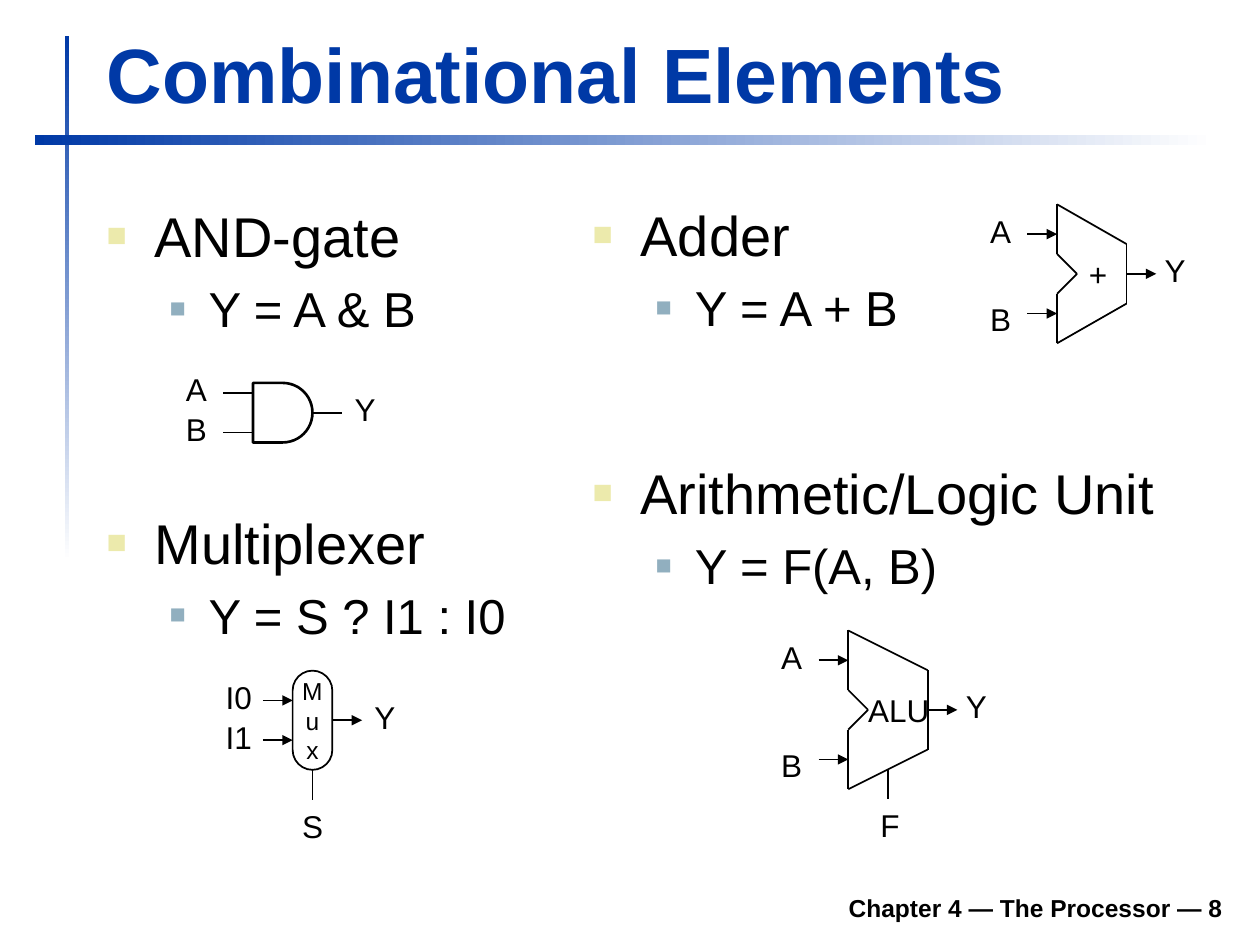
from dataclasses import dataclass
from lxml.etree import SubElement as Sub
from pptx import Presentation
from pptx.dml.color import RGBColor as Rgb
from pptx.enum.shapes import MSO_CONNECTOR as Conn, MSO_SHAPE as Kind
from pptx.enum.text import MSO_ANCHOR as Anchor, MSO_AUTO_SIZE as Auto, PP_ALIGN as Align
from pptx.oxml.ns import qn
from pptx.util import Inches, Mm, Pt


@dataclass(frozen=True)
class Theme:
    """Colours, type sizes and line widths."""
    font: str = "Arial"
    blue: str = "0039A6"
    ink: str = "000000"
    white: str = "FFFFFF"
    sand: str = "ECEAAC"
    steel: str = "91AFBF"
    title: int = 44
    head: int = 32
    sub: int = 28
    label: int = 18
    small: int = 14
    thin: float = 1
    bold: float = 1.5


T = Theme()


def cells(*nums):
    """Turn counts of grid cells, 127 to the slide's width, into lengths."""
    return [Mm(2 * n) for n in nums]


def style(par, size, color=T.ink, bold=False):
    """Format every run of a paragraph."""
    for run in par.runs:
        font = run.font
        font.name, font.size, font.bold = T.font, Pt(size), bold
        font.color.rgb = Rgb.from_string(color)


def inset(frame, gap=0):
    """Give a text frame equal insets."""
    frame.margin_left = frame.margin_right = gap
    frame.margin_top = frame.margin_bottom = gap


def title(slide, text, box):
    """Move and format the title placeholder."""
    shape = slide.shapes.title
    shape.left, shape.top, shape.width, shape.height = cells(*box)
    frame = shape.text_frame
    frame.text = text
    frame.vertical_anchor, frame.auto_size = Anchor.BOTTOM, Auto.NONE
    frame.paragraphs[0].alignment = Align.LEFT
    style(frame.paragraphs[0], T.title, T.blue, True)


def footer(slide, text, box):
    """Add the right-aligned footer."""
    frame = slide.shapes.add_textbox(*cells(*box)).text_frame
    frame.text = text
    frame.word_wrap, frame.vertical_anchor = True, Anchor.BOTTOM
    frame.paragraphs[0].alignment = Align.RIGHT
    style(frame.paragraphs[0], T.small, bold=True)


def bar(slide, box, angle):
    """Add a bar that fades from blue to white."""
    shape = slide.shapes.add_shape(Kind.RECTANGLE, *cells(*box))
    shape.shadow.inherit = False
    shape.line.fill.background()
    shape.fill.gradient()
    shape.fill.gradient_angle = angle
    for stop, color in zip(shape.fill.gradient_stops, (T.blue, T.white)):
        stop.color.rgb = Rgb.from_string(color)


def bullet(par, size, color, share, left, hang):
    """Format a paragraph with a square bullet."""
    style(par, size)
    par.space_before = Pt(size * 0.2)
    props = par._p.get_or_add_pPr()
    props.set("marL", str(Inches(left)))
    props.set("indent", str(-Inches(hang)))
    Sub(Sub(props, qn("a:buClr")), qn("a:srgbClr"), val=color)
    Sub(props, qn("a:buSzPct"), val=str(share * 1000))
    Sub(props, qn("a:buFont"), typeface=T.font)
    Sub(props, qn("a:buChar"), char="■")


def topic(slide, head, rule, x, y, wide):
    """Add an element's name with its equation below."""
    frame = slide.shapes.add_textbox(*cells(x, y, wide, 18)).text_frame
    frame.word_wrap = True
    frame.text = f"{head}\n{rule}"
    top, low = frame.paragraphs
    low.level = 1
    bullet(top, T.head, T.sand, 60, 0.38, 0.38)
    bullet(low, T.sub, T.steel, 55, 0.81, 0.31)


def label(slide, text, x, y):
    """Add a signal name."""
    wide = 4.7 + 0.5 * (len(text) - 1)
    frame = slide.shapes.add_textbox(*cells(x, y, wide, 5.1)).text_frame
    frame.text, frame.word_wrap = text, False
    style(frame.paragraphs[0], T.label)


def lead(slide, start, end, arrow=False):
    """Add a wire, with an arrowhead if asked."""
    wire = slide.shapes.add_connector(Conn.STRAIGHT, *cells(*start, *end))
    wire.line.width = Pt(T.thin)
    wire.line.color.rgb = Rgb.from_string(T.ink)
    if arrow:
        Sub(wire.line._get_or_add_ln(), qn("a:tailEnd"), type="triangle")
    Sub(wire._element.spPr, qn("a:effectLst"))


def pin(slide, text, x, y, arrow=True, drop=2.9):
    """Add an input wire that ends at x, and its name."""
    lead(slide, (x - 3, y), (x, y), arrow)
    label(slide, text, x - 8, y - drop)


def exit(slide, x, y, arrow=True, gap=3):
    """Add the output wire that starts at x, and its name."""
    lead(slide, (x, y), (x + 3, y), arrow)
    label(slide, "Y", x + gap, y - 2.9)


def trace(shape, width=T.thin):
    """Leave a shape with an outline only."""
    shape.shadow.inherit = False
    shape.fill.background()
    shape.line.width = Pt(width)
    shape.line.color.rgb = Rgb.from_string(T.ink)


def gate(slide, x, y):
    """Draw the AND-gate."""
    trace(slide.shapes.add_shape(Kind.FLOWCHART_DELAY, *cells(x, y, 6, 6)), T.bold)
    pin(slide, "A", x, y + 1, False)
    pin(slide, "B", x, y + 5, False)
    exit(slide, x + 6, y + 3, False)


def mux(slide, x, y):
    """Draw the multiplexer."""
    body = slide.shapes.add_shape(Kind.ROUNDED_RECTANGLE, *cells(x, y, 4, 10))
    body.adjustments[0] = 0.5
    trace(body)
    frame = body.text_frame
    inset(frame)
    frame.text, frame.vertical_anchor = "M\vu\vx", Anchor.MIDDLE
    frame.paragraphs[0].alignment = Align.CENTER
    style(frame.paragraphs[0], T.small)
    pin(slide, "I0", x, y + 3)
    pin(slide, "I1", x, y + 7)
    exit(slide, x + 4, y + 5)
    lead(slide, (x + 2, y + 13), (x + 2, y + 10))
    label(slide, "S", x - 0.3, y + 13.1)


def unit(slide, text, x, y, wide, high, shift):
    """Draw a notched arithmetic block with its text shifted from the left."""
    mid = high / 2
    spots = [(0, 0), (wide, 4), (wide, high - 4), (0, high),
             (0, mid + 2), (2, mid), (0, mid - 2)]
    ends = [(x + dx, y + dy) for dx, dy in spots]
    for start, end in zip(ends, ends[1:] + ends[:1]):
        lead(slide, start, end)
    pin(slide, "A", x, y + 3)
    pin(slide, "B", x, y + high - 3, drop=2)
    exit(slide, x + wide, y + mid, gap=2.6)
    box = cells(x + shift, y + mid - 1.9, 2.1 * len(text), 3.8)
    frame = slide.shapes.add_textbox(*box).text_frame
    inset(frame)
    frame.text, frame.word_wrap = text, False
    style(frame.paragraphs[0], T.label)


def main():
    """Build the slide and save it."""
    deck = Presentation()
    deck.slide_width, deck.slide_height = Inches(10), Inches(7.5)
    slide = deck.slides.add_slide(deck.slide_layouts[5])
    bar(slide, (6.55, 3.6, 0.45, 53), 270)
    bar(slide, (3.5, 13.6, 119, 1), 0)
    title(slide, "Combinational Elements", (9.5, 2.1, 114.7, 10.5))
    footer(slide, "Chapter 4 — The Processor — 8", (23.5, 88.6, 101, 5))
    topic(slide, "AND-gate", "Y = A & B", 9.5, 19.7, 43)
    topic(slide, "Multiplexer", "Y = S ? I1 : I0", 9.5, 50.6, 45)
    topic(slide, "Adder", "Y = A + B", 58.5, 19.6, 43)
    topic(slide, "Arithmetic/Logic Unit", "Y = F(A, B)", 58.5, 45.6, 60)
    gate(slide, 25.5, 38.6)
    mux(slide, 29.5, 67.6)
    unit(slide, "+", 106.55, 20.6, 7, 14, 3.2)
    unit(slide, "ALU", 85.5, 63.55, 8, 16, 2)
    lead(slide, (89.5, 77.55), (89.5, 80.55))
    label(slide, "F", 87.5, 80.6)
    deck.save("out.pptx")


if __name__ == "__main__":
    main()
